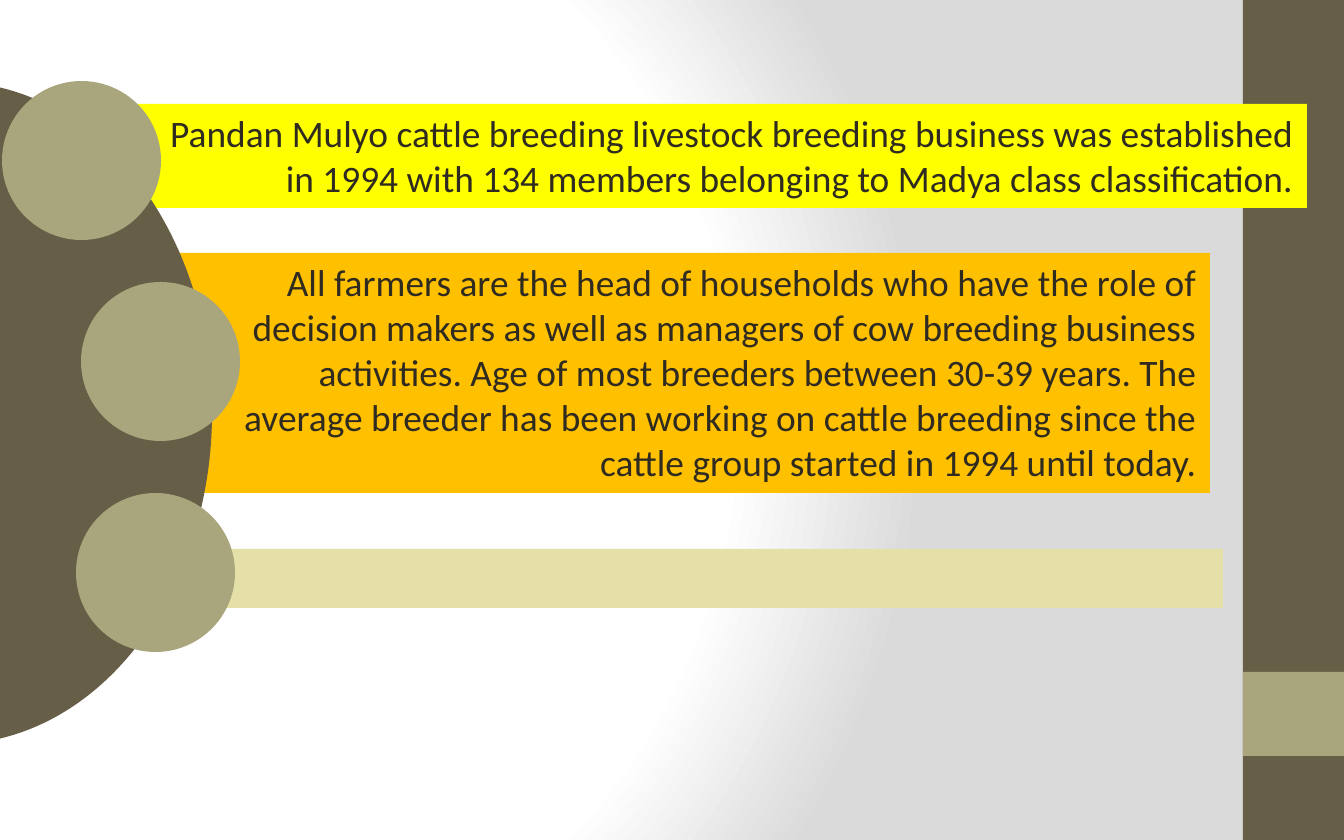
from dataclasses import dataclass

from pptx import Presentation
from pptx.dml.color import RGBColor as RGB
from pptx.enum.shapes import MSO_SHAPE as Shape
from pptx.enum.text import MSO_ANCHOR as Anchor, PP_ALIGN as Align
from pptx.oxml import parse_xml
from pptx.oxml.ns import nsdecls, qn
from pptx.util import Emu, Pt

SCALE = 914400 / 134.4
WIDTH, HEIGHT = 1344, 840


@dataclass(frozen=True)
class Theme:
    font: str = "Calibri"
    size: int = 20
    text: str = "2F2B20"
    dark: str = "675E47"
    olive: str = "A9A57C"
    yellow: str = "FFFF00"
    orange: str = "FFC000"
    sand: str = "E4E0A7"
    paper: str = "FFFFFF"
    shade: str = "DADADA"


THEME = Theme()

FOUNDING = (
    "Pandan Mulyo cattle breeding livestock breeding business was established "
    "in 1994 with 134 members belonging to Madya class classification."
)
FARMERS = (
    "All farmers are the head of households who have the role of decision makers "
    "as well as managers of cow breeding business activities. Age of most breeders "
    "between 30-39 years. The average breeder has been working on cattle breeding "
    "since the cattle group started in 1994 until today."
)


def px(n):
    return Emu(round(n * SCALE))


def set_background(s):
    s.background.fill.gradient()
    old = s._element.find(".//" + qn("a:gradFill"))
    stops = ((0, THEME.paper), (75, THEME.paper), (100, THEME.shade))
    gs = "".join(
        f'<a:gs pos="{pos * 1000}"><a:srgbClr val="{color}"/></a:gs>'
        for pos, color in stops
    )
    grad = parse_xml(
        f'<a:gradFill {nsdecls("a")} rotWithShape="1"><a:gsLst>{gs}</a:gsLst>'
        '<a:path path="circle">'
        '<a:fillToRect l="20000" t="50000" r="100000" b="50000"/>'
        "</a:path></a:gradFill>"
    )
    old.getparent().replace(old, grad)


def add_block(s, kind, box, color):
    sp = s.shapes.add_shape(kind, *map(px, box))
    sp.shadow.inherit = False
    sp.fill.solid()
    sp.fill.fore_color.rgb = RGB.from_string(color)
    sp.line.fill.background()
    return sp


def add_text_bar(s, box, color, text):
    tf = add_block(s, Shape.RECTANGLE, box, color).text_frame
    tf.word_wrap = True
    tf.vertical_anchor = Anchor.TOP
    p = tf.paragraphs[0]
    p.alignment = Align.RIGHT
    r = p.add_run()
    r.text = text
    r.font.name = THEME.font
    r.font.size = Pt(THEME.size)
    r.font.color.rgb = RGB.from_string(THEME.text)


def add_circle(s, left, top, size=159):
    add_block(s, Shape.OVAL, (left, top, size, size), THEME.olive)


def main():
    prs = Presentation()
    prs.slide_width, prs.slide_height = px(WIDTH), px(HEIGHT)
    s = prs.slides.add_slide(prs.slide_layouts[6])
    set_background(s)

    add_block(s, Shape.RECTANGLE, (1243, 0, 101, HEIGHT), THEME.dark)
    add_block(s, Shape.RECTANGLE, (1243, 672, 101, 84), THEME.olive)

    add_text_bar(s, (180, 253, 1030, 240), THEME.orange, FARMERS)
    add_text_bar(s, (137, 104, 1170, 104), THEME.yellow, FOUNDING)
    add_block(s, Shape.RECTANGLE, (115, 549, 1108, 59), THEME.sand)

    add_block(s, Shape.OVAL, (-306, 82, 518, 662), THEME.dark)
    for left, top in ((2, 81), (81, 282), (76, 493)):
        add_circle(s, left, top)

    prs.save("out.pptx")


if __name__ == "__main__":
    main()
